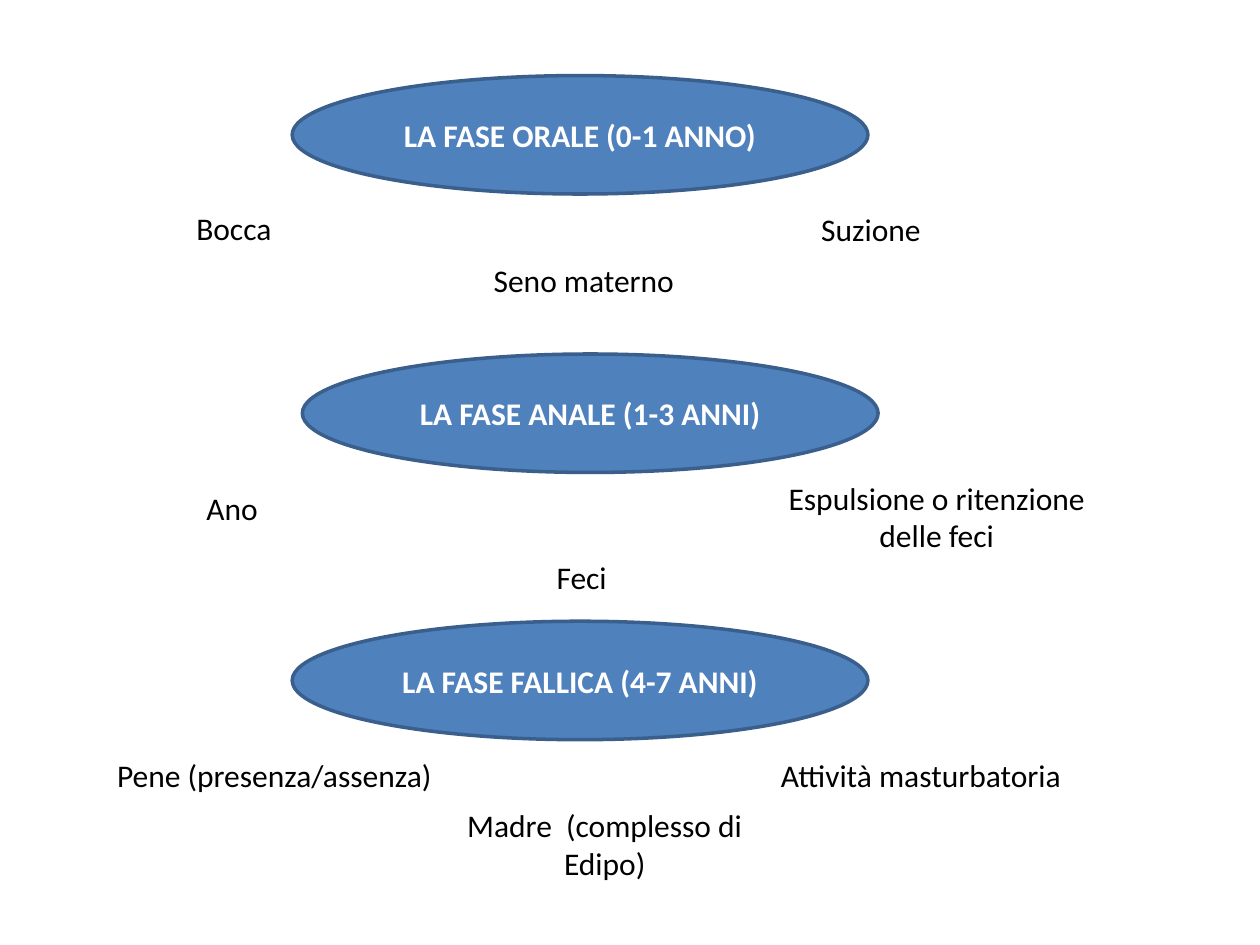
"""Build a slide on three phases of psychosexual development."""
from dataclasses import dataclass

from pptx import Presentation
from pptx.dml.color import RGBColor
from pptx.enum.shapes import MSO_SHAPE
from pptx.enum.text import MSO_ANCHOR, MSO_AUTO_SIZE, PP_ALIGN
from pptx.shapes.autoshape import Shape
from pptx.slide import Slide
from pptx.util import Pt


@dataclass(frozen=True)
class Theme:
    font: str = "Calibri"
    size: float = 18
    fill: RGBColor = RGBColor(0x4F, 0x81, 0xBD)
    outline: RGBColor = RGBColor(0x3A, 0x5F, 0x8C)
    outline_width: float = 2
    title: RGBColor = RGBColor(0xFF, 0xFF, 0xFF)
    label: RGBColor = RGBColor(0, 0, 0)
    phase_width: float = 329
    phase_height: float = 67.7
    line_height: float = 22.1
    label_margin: float = 7


@dataclass(frozen=True)
class Label:
    text: str
    left: float
    top: float
    width: float
    lines: int = 1
    align: PP_ALIGN = PP_ALIGN.LEFT


@dataclass(frozen=True)
class Phase:
    title: str
    left: float
    top: float
    labels: tuple[Label, ...]


THEME = Theme()
PHASES = (
    Phase("LA FASE ORALE (0-1 ANNO)", 167, 43.2, (
        Label("Bocca", 105.1, 115.9, 113),
        Label("Seno materno", 275, 145.4, 136.1),
        Label("Suzione", 462.2, 116.6, 96.5),
    )),
    Phase("LA FASE ANALE (1-3 ANNI)", 172.8, 202.3, (
        Label("Ano", 110.9, 275.8, 79.2),
        Label("Feci ", 275, 315.4, 118.8, align=PP_ALIGN.CENTER),
        Label("Espulsione o ritenzione delle feci", 433.4, 270, 203.8, 2, PP_ALIGN.CENTER),
    )),
    Phase("LA FASE FALLICA (4-7 ANNI)", 167, 355, (
        Label("Pene (presenza/assenza)", 59.8, 428.4, 203.8),
        Label("Madre  (complesso di Edipo)", 252, 457.2, 187.2, 2, PP_ALIGN.CENTER),
        Label("Attività masturbatoria", 439.2, 428.4, 203.8),
    )),
)


def write(holder: Shape, text: str, color: RGBColor, align: PP_ALIGN, bold: bool = False) -> None:
    """Put one styled paragraph in a shape."""
    holder.text_frame.word_wrap = True
    paragraph = holder.text_frame.paragraphs[0]
    paragraph.text = text
    paragraph.alignment = align
    paragraph.font.name = THEME.font
    paragraph.font.size = Pt(THEME.size)
    paragraph.font.bold = bold
    paragraph.font.color.rgb = color


def draw_label(slide: Slide, label: Label) -> None:
    """Draw a plain text label."""
    height = label.lines * THEME.line_height + THEME.label_margin
    caption = slide.shapes.add_textbox(Pt(label.left), Pt(label.top), Pt(label.width), Pt(height))
    write(caption, label.text, THEME.label, label.align)
    caption.text_frame.auto_size = MSO_AUTO_SIZE.SHAPE_TO_FIT_TEXT


def draw_phase(slide: Slide, phase: Phase) -> None:
    """Draw a phase ellipse and its labels."""
    ellipse = slide.shapes.add_shape(
        MSO_SHAPE.OVAL, Pt(phase.left), Pt(phase.top), Pt(THEME.phase_width), Pt(THEME.phase_height)
    )
    ellipse.shadow.inherit = False
    ellipse.fill.solid()
    ellipse.fill.fore_color.rgb = THEME.fill
    ellipse.line.color.rgb = THEME.outline
    ellipse.line.width = Pt(THEME.outline_width)
    ellipse.text_frame.vertical_anchor = MSO_ANCHOR.MIDDLE
    write(ellipse, phase.title, THEME.title, PP_ALIGN.CENTER, bold=True)
    for label in phase.labels:
        draw_label(slide, label)


def main() -> None:
    """Create and save the presentation."""
    presentation = Presentation()
    presentation.slide_width, presentation.slide_height = Pt(720), Pt(540)
    slide = presentation.slides.add_slide(presentation.slide_layouts[6])
    for phase in PHASES:
        draw_phase(slide, phase)
    presentation.save("out.pptx")


if __name__ == "__main__":
    main()
